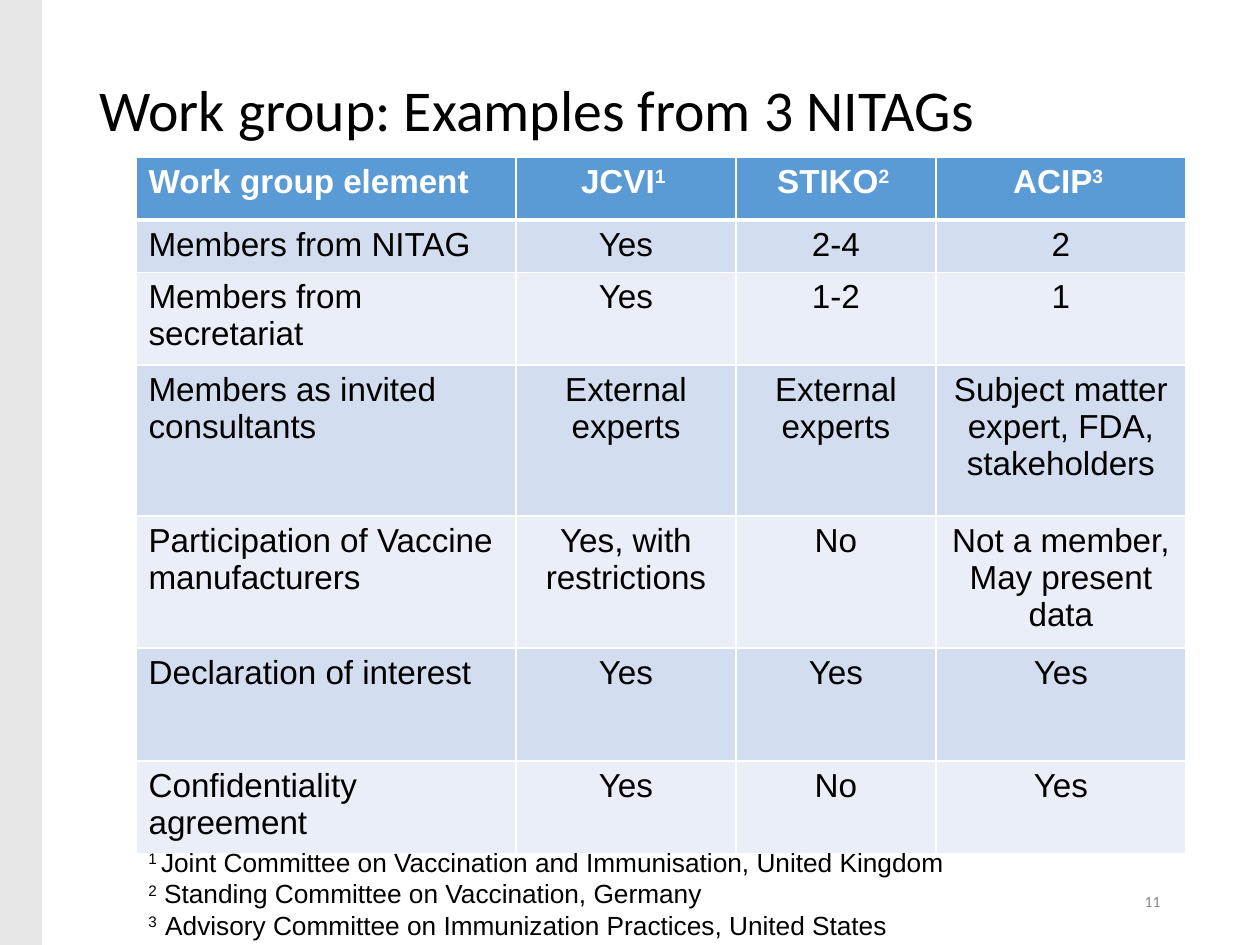
import pptx
import pptx.dml.color
import pptx.enum.shapes
import pptx.enum.text
import pptx.oxml
import pptx.oxml.ns
import pptx.util

RGBColor = pptx.dml.color.RGBColor
ALIGN = pptx.enum.text.PP_ALIGN
ANCHOR = pptx.enum.text.MSO_ANCHOR

WHITE = RGBColor(0xFF, 0xFF, 0xFF)
BLACK = RGBColor(0x00, 0x00, 0x00)
GREY = RGBColor(0x8C, 0x8C, 0x8C)
STRIPE_GREY = RGBColor(0xE7, 0xE6, 0xE6)
HEADER_BLUE = RGBColor(0x5B, 0x9B, 0xD5)
BAND_DARK = RGBColor(0xD2, 0xDE, 0xEF)
BAND_LIGHT = RGBColor(0xEA, 0xEF, 0xF7)

PIXELS_PER_INCH = 126
COLUMN_WIDTHS = [380, 220, 200, 250]
ROW_HEIGHTS = [63, 47, 58, 151, 113, 113, 77]
SUPERSCRIPT = "^"
ROWS = [
    ["Work group element", "JCVI^1 ", "STIKO^2 ", "ACIP^3 "],
    ["Members from NITAG", "Yes", "2-4", "2"],
    ["Members from secretariat", "Yes", "1-2", "1"],
    ["Members as invited consultants", "External experts", "External experts",
     "Subject matter expert, FDA, stakeholders"],
    ["Participation of Vaccine manufacturers", "Yes, with restrictions", "No",
     "Not a member,\nMay present data"],
    ["Declaration of interest", "Yes", "Yes", "Yes"],
    ["Confidentiality agreement", "Yes", "No", "Yes"],
]
FOOTNOTES = "\n".join([
    "^1 ^Joint Committee on Vaccination and Immunisation, United Kingdom",
    "^2^ Standing Committee on Vaccination, Germany",
    "^3  ^Advisory Committee on Immunization Practices, United States",
])


def px(length):
    return pptx.util.Emu(round(length * 914400 / PIXELS_PER_INCH))


def write_text(frame, text, font="Arial", size=19, color=BLACK, bold=False,
               align=ALIGN.LEFT, anchor=ANCHOR.TOP, wrap=True, spacing=None):
    frame.word_wrap = wrap
    frame.vertical_anchor = anchor
    for line_index, line in enumerate(text.split("\n")):
        paragraph = frame.add_paragraph() if line_index else frame.paragraphs[0]
        paragraph.alignment = align
        paragraph.line_spacing = spacing
        for part_index, part in enumerate(line.split(SUPERSCRIPT)):
            if not part:
                continue
            run = paragraph.add_run()
            run.text = part
            run.font.name = font
            run.font.size = pptx.util.Pt(size)
            run.font.bold = bold
            run.font.color.rgb = color
            if part_index % 2:
                run.font._element.set("baseline", "30000")


def add_text_box(slide, box, text, **text_format):
    shape = slide.shapes.add_textbox(*map(px, box))
    write_text(shape.text_frame, text, **text_format)


def add_side_stripe(slide, box):
    shape = slide.shapes.add_shape(
        pptx.enum.shapes.MSO_SHAPE.RECTANGLE, *map(px, box))
    shape.shadow.inherit = False
    shape.fill.solid()
    shape.fill.fore_color.rgb = STRIPE_GREY
    shape.line.fill.background()


def set_borders(cell, bottom_width):
    properties = cell._tc.get_or_add_tcPr()
    widths = {"lnL": 1, "lnR": 1, "lnT": 1, "lnB": bottom_width}
    for index, (side, width) in enumerate(widths.items()):
        properties.insert(index, pptx.oxml.parse_xml(
            f'<a:{side} {pptx.oxml.ns.nsdecls("a")} w="{pptx.util.Pt(width)}">'
            f'<a:solidFill><a:srgbClr val="{WHITE}"/></a:solidFill></a:{side}>'))


def add_comparison_table(slide, left, top):
    table = slide.shapes.add_table(
        len(ROWS), len(COLUMN_WIDTHS), px(left), px(top),
        px(sum(COLUMN_WIDTHS)), px(sum(ROW_HEIGHTS))).table
    for column, width in zip(table.columns, COLUMN_WIDTHS):
        column.width = px(width)
    for row_index, (row, height, texts) in enumerate(
            zip(table.rows, ROW_HEIGHTS, ROWS)):
        row.height = px(height)
        is_header = row_index == 0
        band = BAND_DARK if row_index % 2 else BAND_LIGHT
        for column_index, (cell, text) in enumerate(zip(row.cells, texts)):
            cell.fill.solid()
            cell.fill.fore_color.rgb = HEADER_BLUE if is_header else band
            set_borders(cell, bottom_width=3 if is_header else 1)
            write_text(cell.text_frame, text, bold=is_header,
                       color=WHITE if is_header else BLACK,
                       align=ALIGN.CENTER if column_index else ALIGN.LEFT)


def main():
    presentation = pptx.Presentation()
    presentation.slide_width = px(1260)
    presentation.slide_height = px(945)
    slide = presentation.slides.add_slide(presentation.slide_layouts[6])
    add_side_stripe(slide, (0, 0, 42, 945))
    add_text_box(slide, (87, 21, 1086, 183), "Work group: Examples from 3 NITAGs",
                 font="Calibri", size=33, anchor=ANCHOR.MIDDLE, spacing=0.9)
    add_text_box(slide, (890, 876, 283, 50), "11", font="Calibri", size=9,
                 color=GREY, align=ALIGN.RIGHT, anchor=ANCHOR.MIDDLE)
    add_comparison_table(slide, 136, 157)
    add_text_box(slide, (136, 840, 827, 108), FOOTNOTES, size=15, wrap=False)
    presentation.save("out.pptx")


if __name__ == "__main__":
    main()
